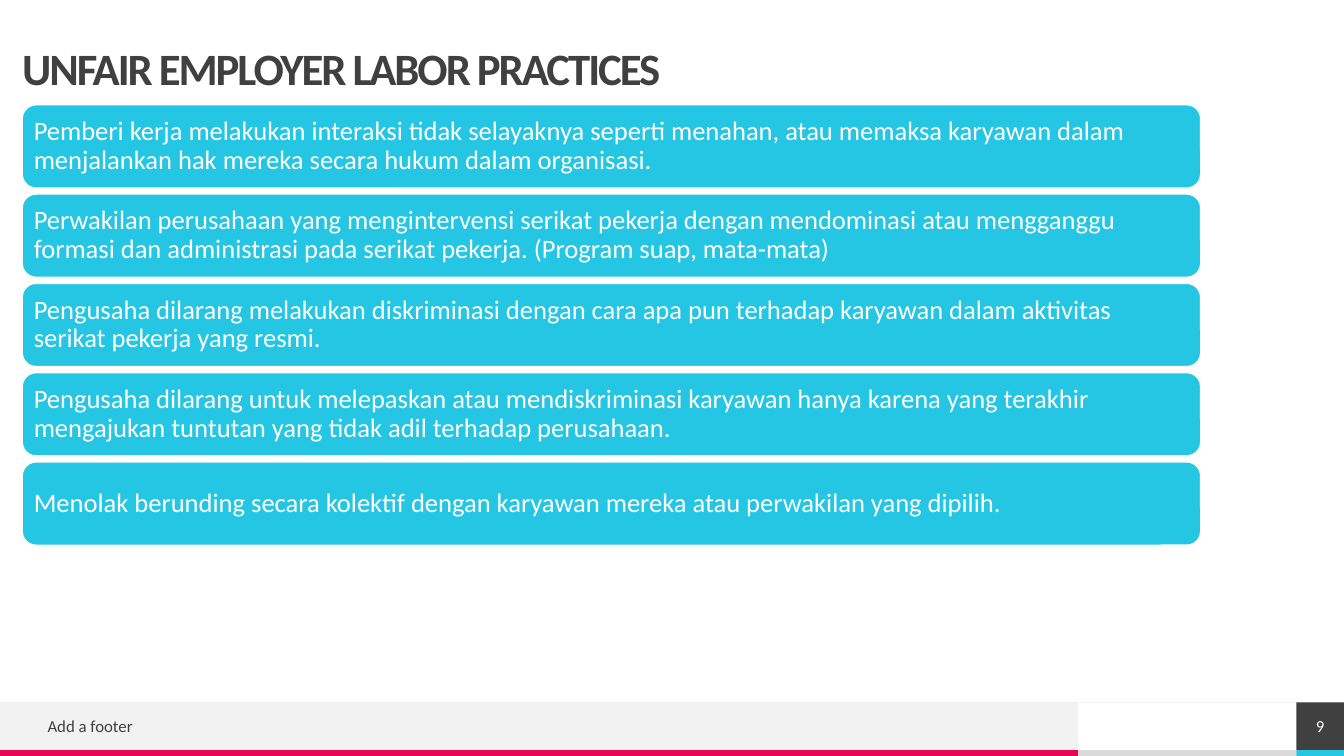
from dataclasses import dataclass

from lxml.etree import SubElement
from pptx import Presentation
from pptx.dml.color import RGBColor as Rgb
from pptx.enum.shapes import MSO_CONNECTOR as Connector, MSO_SHAPE as Shape
from pptx.enum.text import MSO_ANCHOR as Anchor, PP_ALIGN as Align
from pptx.oxml.ns import qn
from pptx.util import Cm, Pt


@dataclass(frozen=True)
class Theme:
    font: str = "Calibri"
    accent: Rgb = Rgb.from_string("25C6E3")
    stripe: Rgb = Rgb.from_string("E80554")
    dark: Rgb = Rgb.from_string("404040")
    pale: Rgb = Rgb.from_string("F2F2F2")
    grey: Rgb = Rgb.from_string("DADADA")
    white: Rgb = Rgb.from_string("FFFFFF")
    title_size: int = 32
    practice_size: int = 19
    small_size: int = 12


THEME = Theme()
SLIDE_WIDTH, SLIDE_HEIGHT = 33.87, 19.05

PRACTICES = [
    "Pemberi kerja melakukan interaksi tidak selayaknya seperti menahan, atau memaksa "
    "karyawan dalam menjalankan hak mereka secara hukum dalam organisasi.",
    "Perwakilan perusahaan yang mengintervensi serikat pekerja dengan mendominasi atau "
    "mengganggu formasi dan administrasi pada serikat pekerja. (Program suap, mata-mata)",
    "Pengusaha dilarang melakukan diskriminasi dengan cara apa pun terhadap karyawan "
    "dalam aktivitas serikat pekerja yang resmi.",
    "Pengusaha dilarang untuk melepaskan atau mendiskriminasi karyawan hanya karena yang "
    "terakhir mengajukan tuntutan yang tidak adil terhadap perusahaan.",
    "Menolak berunding secara kolektif dengan karyawan mereka atau perwakilan yang dipilih.",
]


def style_run(run, size, color, bold=False, tracking=0):
    run.font.name = THEME.font
    run.font.size = Pt(size)
    run.font.color.rgb = color
    run.font.bold = bold
    if tracking:
        run._r.get_or_add_rPr().set("spc", str(round(tracking * 100)))


def write(holder, text, align=Align.LEFT, spacing=1.0, inset=0):
    frame = holder.text_frame
    frame.word_wrap = True
    frame.vertical_anchor = Anchor.MIDDLE
    frame.margin_left = frame.margin_top = frame.margin_right = frame.margin_bottom = Cm(inset)
    paragraph = frame.paragraphs[0]
    paragraph.text = text
    paragraph.alignment = align
    paragraph.line_spacing = spacing
    return paragraph.runs[0]


def add_text(slide, box, text, **layout):
    return write(slide.shapes.add_textbox(*map(Cm, box)), text, **layout)


def add_block(slide, box, fill, outline=None, kind=Shape.RECTANGLE):
    block = slide.shapes.add_shape(kind, *map(Cm, box))
    block.shadow.inherit = False
    block.fill.solid()
    block.fill.fore_color.rgb = fill
    if outline is None:
        block.line.fill.background()
    else:
        block.line.color.rgb = outline
        block.line.width = Pt(1)
    return block


def add_title(slide, box):
    title = add_text(slide, box, "UNFAIR EMPLOYER LABOR PRACTICES", spacing=0.9)
    style_run(title, THEME.title_size, THEME.dark, bold=True, tracking=-1.5)


def add_practices(slide, box, gap=0.15):
    left, top, width, height = box
    card_height = (height - gap * (len(PRACTICES) - 1)) / len(PRACTICES)
    for index, practice in enumerate(PRACTICES):
        card_box = (left, top + index * (card_height + gap), width, card_height)
        card = add_block(slide, card_box, THEME.accent, THEME.white, Shape.ROUNDED_RECTANGLE)
        sentence = write(card, practice, spacing=0.9, inset=0.19)
        style_run(sentence, THEME.practice_size, THEME.white)


def add_footer(slide, box, stripe_height=0.15, number_width=1.2, blank_width=5.5):
    left, top, width, height = box
    band_height = height - stripe_height
    stripe_top = top + band_height
    number_left = left + width - number_width
    blank_left = number_left - blank_width
    band_width = blank_left - left

    add_block(slide, (left, top, band_width, band_height), THEME.pale)
    stripes = [(left, band_width, THEME.stripe),
               (blank_left, blank_width, THEME.grey),
               (number_left, number_width, THEME.accent)]
    for stripe_left, stripe_width, color in stripes:
        add_block(slide, (stripe_left, stripe_top, stripe_width, stripe_height), color)

    rule = slide.shapes.add_connector(Connector.STRAIGHT, Cm(left + width), Cm(top),
                                      Cm(left), Cm(top))
    rule.line.color.rgb = THEME.pale
    rule.line.width = Pt(0.5)
    SubElement(rule._element.spPr, qn("a:effectLst"))

    note = add_text(slide, (left + 1.2, top + 0.2, 15.72, 0.8), "Add a footer")
    style_run(note, THEME.small_size, THEME.dark)
    number_block = add_block(slide, (number_left, top, number_width, band_height), THEME.dark)
    number = write(number_block, "9", align=Align.CENTER)
    style_run(number, THEME.small_size, THEME.white)


def main():
    deck = Presentation()
    deck.slide_width, deck.slide_height = Cm(SLIDE_WIDTH), Cm(SLIDE_HEIGHT)
    slide = deck.slides.add_slide(deck.slide_layouts[6])
    add_footer(slide, (0, 17.7, SLIDE_WIDTH, 1.35))
    add_title(slide, (0.56, 1.19, 31.47, 1.2))
    add_practices(slide, (0.56, 2.64, 29.7, 11.1))
    deck.save("out.pptx")


if __name__ == "__main__":
    main()
